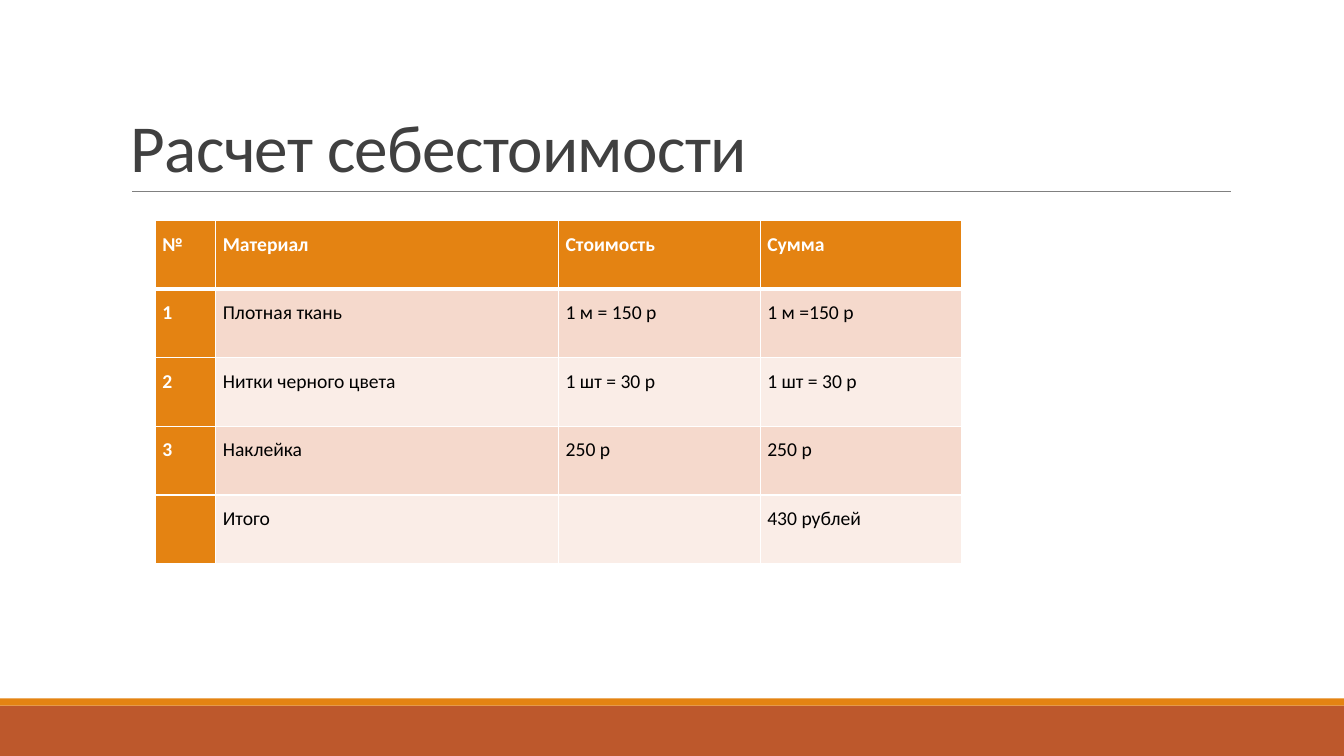
from lxml import etree
from pptx import Presentation
from pptx.dml.color import RGBColor
from pptx.enum import shapes, text
from pptx.oxml.ns import qn
from pptx.util import Inches, Pt

FONT = "Calibri"
WHITE = RGBColor(0xFF, 0xFF, 0xFF)
BLACK = RGBColor(0x00, 0x00, 0x00)
DARK = RGBColor(0x40, 0x40, 0x40)
GRAY = RGBColor(0x80, 0x80, 0x80)
ORANGE = RGBColor(0xE4, 0x83, 0x12)
RUST = RGBColor(0xBD, 0x58, 0x2C)
BANDS = [RGBColor(0xF5, 0xD9, 0xCC), RGBColor(0xFA, 0xED, 0xE7)]

COLUMNS = [0.6, 3.4, 2, 2]
ROW_HEIGHT = 0.68
COSTS = [
    ["№", "Материал", "Стоимость", "Сумма"],
    ["1", "Плотная ткань", "1 м = 150 р", "1 м =150 р"],
    ["2", "Нитки черного цвета", "1 шт = 30 р", "1 шт = 30 р"],
    ["3", "Наклейка", "250 р", "250 р"],
    ["", "Итого", "", "430 рублей"],
]


def add_band(s, top, height, color):
    sp = s.shapes.add_shape(shapes.MSO_SHAPE.RECTANGLE, 0, Inches(top),
                            Inches(13.33), Inches(height))
    sp.shadow.inherit = False
    sp.fill.solid()
    sp.fill.fore_color.rgb = color
    sp.line.fill.background()


def add_rule(s, left, right, y):
    line = s.shapes.add_connector(shapes.MSO_CONNECTOR.STRAIGHT, Inches(left),
                                  Inches(y), Inches(right), Inches(y))
    line.line.color.rgb = GRAY
    line.line.width = Pt(0.5)
    etree.SubElement(line._element.spPr, qn("a:effectLst"))


def add_run(p, words, size, color, bold=False):
    r = p.add_run()
    r.text = words
    r.font.name = FONT
    r.font.size = Pt(size)
    r.font.color.rgb = color
    r.font.bold = bold
    return r


def add_title(s, words):
    tf = s.shapes.add_textbox(Inches(1.2), Inches(0.31),
                              Inches(11), Inches(1.59)).text_frame
    tf.word_wrap = True
    tf.vertical_anchor = text.MSO_ANCHOR.BOTTOM
    p = tf.paragraphs[0]
    p.line_spacing = 0.85
    r = add_run(p, words, 48, DARK)
    r.font._element.set("spc", "-50")


def set_borders(cell, bottom):
    tcPr = cell._tc.get_or_add_tcPr()
    for side, width in (("L", 1), ("R", 1), ("T", 1), ("B", bottom)):
        ln = etree.SubElement(tcPr, qn(f"a:ln{side}"), w=str(Pt(width)))
        fill = etree.SubElement(ln, qn("a:solidFill"))
        etree.SubElement(fill, qn("a:srgbClr"), val=str(WHITE))


def fill_cell(cell, words, row, col):
    heading = row == 0 or col == 0
    # The header's lower edge is thick, and the row below shares it
    set_borders(cell, 3 if row == 0 else 1)
    if row == 1:
        cell._tc.tcPr.find(qn("a:lnT")).set("w", str(Pt(3)))
    cell.fill.solid()
    cell.fill.fore_color.rgb = ORANGE if heading else BANDS[(row - 1) % 2]
    cell.margin_left = cell.margin_right = Inches(0.07)
    cell.margin_top = cell.margin_bottom = 0
    if words:
        p = cell.text_frame.paragraphs[0]
        p.alignment = text.PP_ALIGN.JUSTIFY
        p.line_spacing = 1.5
        add_run(p, words, 14, WHITE if heading else BLACK, heading)


def add_cost_table(s, left, top):
    table = s.shapes.add_table(
        len(COSTS), len(COLUMNS), Inches(left), Inches(top),
        Inches(sum(COLUMNS)), Inches(ROW_HEIGHT * len(COSTS))).table
    for column, width in zip(table.columns, COLUMNS):
        column.width = Inches(width)
    for row, values in enumerate(COSTS):
        table.rows[row].height = Inches(ROW_HEIGHT)
        for col, words in enumerate(values):
            fill_cell(table.cell(row, col), words, row, col)


def main():
    prs = Presentation()
    prs.slide_width, prs.slide_height = Inches(13.33), Inches(7.5)
    s = prs.slides.add_slide(prs.slide_layouts[6])

    # Footer bands
    add_band(s, 7, 0.5, RUST)
    add_band(s, 6.93, 0.07, ORANGE)

    # Title and its rule
    add_rule(s, 1.31, 12.21, 1.9)
    add_title(s, "Расчет себестоимости")

    # Cost table
    add_cost_table(s, 1.54, 2.19)

    prs.save("out.pptx")


if __name__ == "__main__":
    main()
